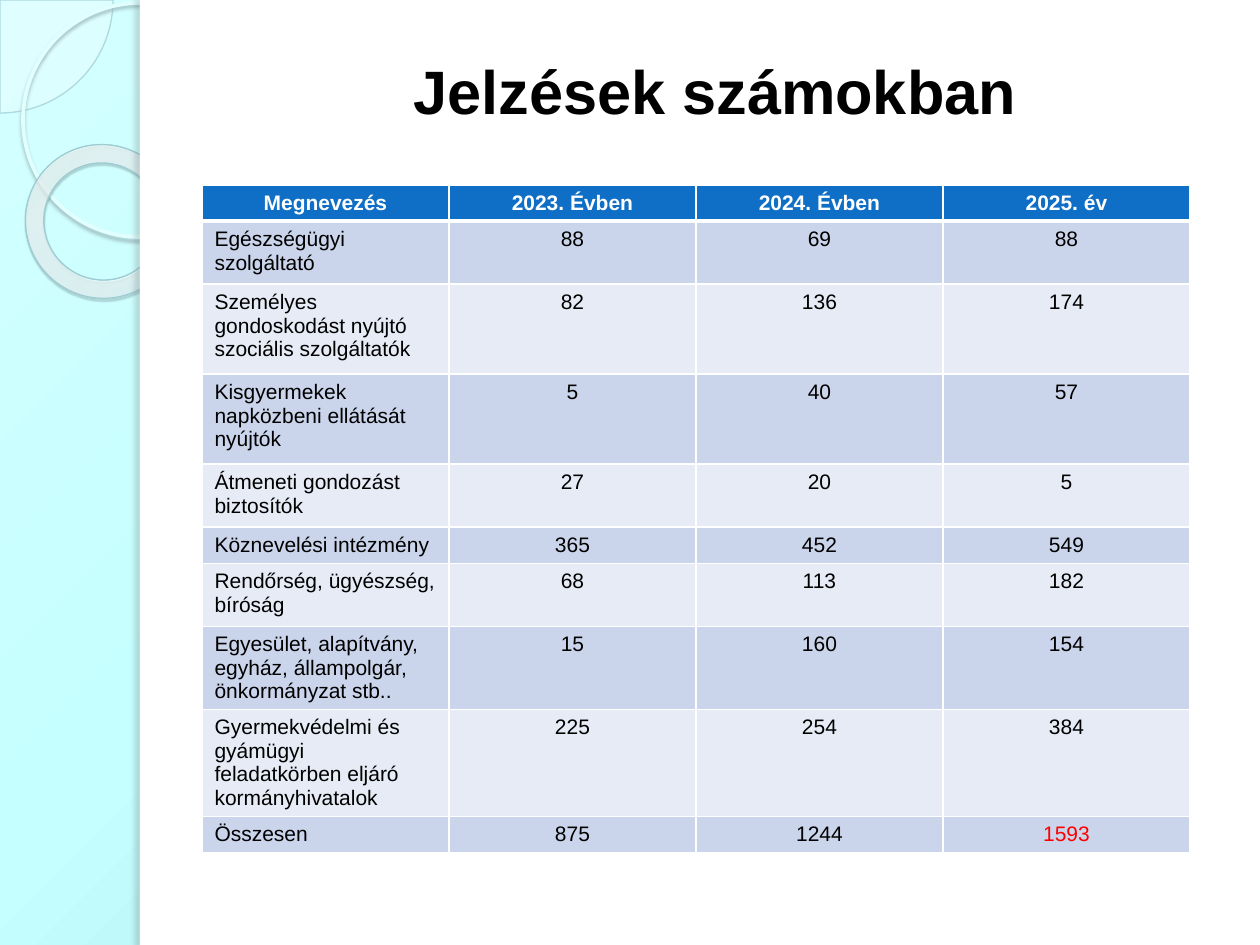
import pptx
import pptx.util
import pptx.oxml
import pptx.oxml.ns
import pptx.dml.color
import pptx.enum.shapes
import pptx.enum.text
import lxml.etree

PX = 914400 / 126
COLORS = {
    "white": "FFFFFF", "black": "000000", "red": "FF0000",
    "header": "0F6FC6", "odd row": "CAD4EA", "even row": "E6EBF5",
    "sky light": "D4FFFF", "sky": "C5FFFF", "sky dark": "8FCBD3",
    "pie": "F5FEFF", "pie line": "ADD9DF",
    "circle line": "E2FFFF", "circle shadow": "99B6BA",
    "ring light": "F7FEFE", "ring middle": "F9FEFF", "ring edge": "9CEEFD",
    "ring line": "9ECCD3", "ring shadow": "465A5C", "panel shadow": "687577",
}
RGB = {name: pptx.dml.color.RGBColor.from_string(value) for name, value in COLORS.items()}
qn = pptx.oxml.ns.qn


def add_color(parent, name, opacity=100):
    color = lxml.etree.SubElement(parent, qn("a:srgbClr"), val=COLORS[name])
    if opacity < 100:
        lxml.etree.SubElement(color, qn("a:alpha"), val=str(opacity * 1000))


def set_gradient(properties, stops):
    gradient = pptx.oxml.parse_xml(
        f'<a:gradFill {pptx.oxml.ns.nsdecls("a")} rotWithShape="1"><a:gsLst/>'
        '<a:path path="circle"><a:fillToRect r="100000" b="100000"/></a:path></a:gradFill>')
    for position, name, opacity in stops:
        stop = lxml.etree.SubElement(gradient[0], qn("a:gs"), pos=str(position * 1000))
        add_color(stop, name, opacity)
    properties.replace(properties.find(qn("a:noFill")), gradient)


presentation = pptx.Presentation()
presentation.slide_width = round(1260 * PX)
presentation.slide_height = round(945 * PX)
slide = presentation.slides.add_slide(presentation.slide_layouts[5])

slide.background.fill.background()
set_gradient(slide.element.find(".//" + qn("p:bgPr")),
             [(0, "sky light", 100), (40, "sky", 100), (100, "sky dark", 100)])

kinds = pptx.enum.shapes.MSO_SHAPE
ring_stops = [(0, "ring light", 70), (70, "ring middle", 55), (100, "ring edge", 60)]
decorations = [
    (kinds.PIE, (-113, -113, 226, 226), [0, 54], 0, ("pie", 33), ("pie line", 0.75), None),
    (kinds.OVAL, (23, 3, 234, 234), [], 0, None, ("circle line", 2.15),
     ("circle shadow", 85, 2, 2, 90)),
    (kinds.DONUT, (25, 145, 155, 153), [0.12], 38.6, ring_stops, ("ring line", 0.75),
     ("ring shadow", 35, 1, 1.2, 75)),
    (kinds.RECTANGLE, (140, 0, 1120, 945), [], 0, ("white", 100), None, None),
    (kinds.RECTANGLE, (140, 0, 10, 945), [], 0, ("white", 100), None,
     ("panel shadow", 25, 3, 3, 180)),
]
for kind, box, adjustments, rotation, fill, line, shadow in decorations:
    shape = slide.shapes.add_shape(kind, *[round(length * PX) for length in box])
    shape.rotation = rotation
    for index, value in enumerate(adjustments):
        shape.adjustments[index] = value
    properties = shape.element.spPr
    shape.fill.background()
    if isinstance(fill, list):
        set_gradient(properties, fill)
    elif fill:
        shape.fill.solid()
        solid = properties.find(qn("a:solidFill"))
        add_color(solid, *fill)
    if line:
        shape.line.color.rgb = RGB[line[0]]
        shape.line.width = pptx.util.Pt(line[1])
    else:
        shape.line.fill.background()
    shape.shadow.inherit = False
    if shadow:
        name, opacity, blur, distance, angle = shadow
        outer = lxml.etree.SubElement(
            properties.find(qn("a:effectLst")), qn("a:outerShdw"),
            blurRad=str(pptx.util.Pt(blur)), dist=str(pptx.util.Pt(distance)),
            dir=str(angle * 60000), algn="ctr", rotWithShape="0")
        add_color(outer, name, opacity)

title = slide.shapes.title
title.left, title.top, title.width, title.height = [
    round(length * PX) for length in (198, 38, 1034, 105)]
title.text_frame.vertical_anchor = pptx.enum.text.MSO_ANCHOR.MIDDLE
paragraph = title.text_frame.paragraphs[0]
paragraph.alignment = pptx.enum.text.PP_ALIGN.CENTER
run = paragraph.add_run()
run.text = "Jelzések számokban"
run.font.name = "Arial"
run.font.size = pptx.util.Pt(35)
run.font.bold = True
run.font.color.rgb = RGB["black"]
title.element.getparent().append(title.element)

rows = [
    (36, "Megnevezés", "2023. Évben", "2024. Évben", "2025. év"),
    (63, "Egészségügyi szolgáltató", "88", "69", "88"),
    (90, "Személyes gondoskodást nyújtó szociális szolgáltatók", "82", "136", "174"),
    (90, "Kisgyermekek napközbeni ellátását nyújtók", "5", "40", "57"),
    (63, "Átmeneti gondozást biztosítók", "27", "20", "5"),
    (36, "Köznevelési intézmény", "365", "452", "549"),
    (63, "Rendőrség, ügyészség, bíróság", "68", "113", "182"),
    (83, "Egyesület, alapítvány, egyház, állampolgár, önkormányzat stb..", "15", "160", "154"),
    (107, "Gyermekvédelmi és gyámügyi feladatkörben eljáró kormányhivatalok",
     "225", "254", "384"),
    (36, "Összesen", "875", "1244", "1593"),
]
table_height = sum(row[0] for row in rows)
table = slide.shapes.add_table(
    len(rows), 4, *[round(length * PX) for length in (202, 185, 988, table_height)]).table
for column in table.columns:
    column.width = round(247 * PX)

for row_index, (height, *texts) in enumerate(rows):
    table.rows[row_index].height = round(height * PX)
    is_header = row_index == 0
    fill_name = "header" if is_header else "odd row" if row_index % 2 else "even row"
    for column_index, text in enumerate(texts):
        cell = table.cell(row_index, column_index)
        cell.fill.solid()
        cell.fill.fore_color.rgb = RGB[fill_name]
        paragraph = cell.text_frame.paragraphs[0]
        if is_header or column_index > 0:
            paragraph.alignment = pptx.enum.text.PP_ALIGN.CENTER
        run = paragraph.add_run()
        run.text = text
        run.font.name = "Arial"
        run.font.size = pptx.util.Pt(12)
        run.font.bold = is_header
        is_grand_total = row_index == len(rows) - 1 and column_index == 3
        run.font.color.rgb = RGB["white" if is_header else "red" if is_grand_total else "black"]
        cell_properties = cell._tc.get_or_add_tcPr()
        for position, side in enumerate("LRTB"):
            under_header = (row_index, side) in [(0, "B"), (1, "T")]
            border = lxml.etree.Element(
                qn("a:ln" + side), w=str(pptx.util.Pt(3 if under_header else 1)))
            add_color(lxml.etree.SubElement(border, qn("a:solidFill")), "white")
            cell_properties.insert(position, border)

presentation.save("out.pptx")
